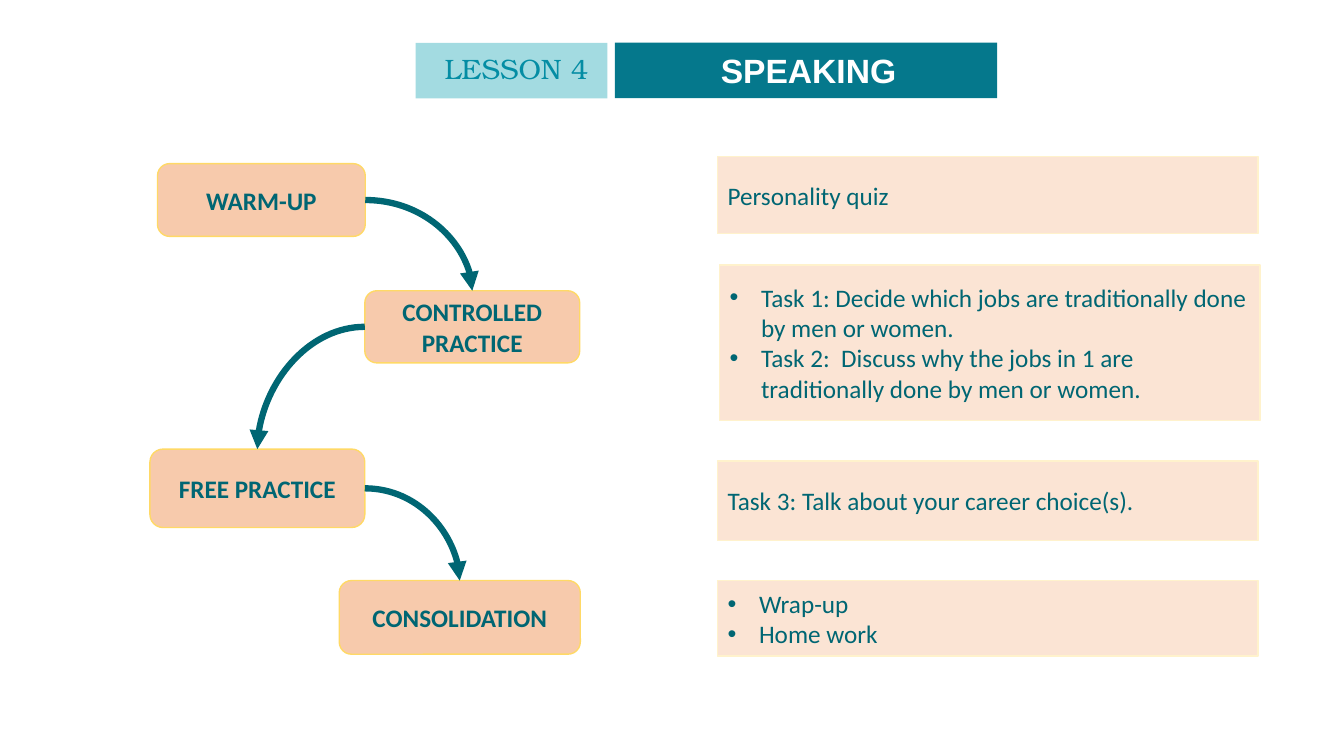
from lxml.etree import SubElement
from pptx import Presentation
from pptx.dml.color import RGBColor
from pptx.enum.shapes import MSO_CONNECTOR as Connector, MSO_SHAPE as Shape
from pptx.enum.text import MSO_ANCHOR as Anchor, MSO_AUTO_SIZE as AutoSize, PP_ALIGN as Align
from pptx.oxml.ns import qn
from pptx.util import Pt

INK = "006673"
BULLET_INDENT = Pt(22.5)
RIGHT, LEFT, TOP = 3, 1, 0

STEPS = [
    ("WARM-UP", (112.5, 116.9, 148.4, 52)),
    ("CONTROLLED PRACTICE", (260.6, 207.7, 153.5, 51.5)),
    ("FREE PRACTICE", (107.1, 320.8, 153.5, 56)),
    ("CONSOLIDATION", (242.3, 414.7, 172.2, 52.6)),
]
ACTIVITIES = [
    (["Personality quiz"], (512.6, 112, 386, 55)),
    (["Task 1: Decide which jobs are traditionally done by men or women.",
      "Task 2:  Discuss why the jobs in 1 are traditionally done by men or women."],
     (514, 189.2, 386, 111)),
    (["Task 3: Talk about your career choice(s)."], (512.6, 329.2, 386, 57)),
    (["Wrap-up", "Home work"], (512.6, 414.7, 386, 54)),
]


def color(hex_value):
    return RGBColor.from_string(hex_value)


def place(shape, box):
    shape.left, shape.top, shape.width, shape.height = map(Pt, box)


def style(paragraph, font_name, size, hex_value, bold=False, align=Align.LEFT):
    paragraph.alignment = align
    font = paragraph.font
    font.name, font.size, font.bold = font_name, Pt(size), bold
    font.color.rgb = color(hex_value)


def add_bullet(paragraph):
    properties = paragraph._p.get_or_add_pPr()
    properties.set("marL", str(BULLET_INDENT))
    properties.set("indent", str(-BULLET_INDENT))
    bullet_color = SubElement(properties, qn("a:buClr"))
    SubElement(bullet_color, qn("a:srgbClr"), val=INK)
    SubElement(properties, qn("a:buFont"), typeface="Arial")
    SubElement(properties, qn("a:buChar"), char="•")


def add_block(slide, kind, box, fill, line=None):
    """Add a filled shape, outlined only when a line colour is given."""
    shape = slide.shapes.add_shape(kind, *map(Pt, box))
    shape.shadow.inherit = False
    shape.fill.solid()
    shape.fill.fore_color.rgb = color(fill)
    if line:
        shape.line.color.rgb = color(line)
        shape.line.width = Pt(1)
    else:
        shape.line.fill.background()
    return shape


def add_step(slide, label, box):
    step = add_block(slide, Shape.ROUNDED_RECTANGLE, box, "F7CAAC", "FFD966")
    step.text_frame.text = label
    style(step.text_frame.paragraphs[0], "Calibri", 18, INK, True, Align.CENTER)
    return step


def add_activity(slide, lines, box):
    """Add a description box; several lines become a bulleted list."""
    frame = add_block(slide, Shape.RECTANGLE, box, "FBE4D4", "FFF2CC").text_frame
    frame.text = "\n".join(lines)
    for paragraph in frame.paragraphs:
        if len(lines) > 1:
            add_bullet(paragraph)
        style(paragraph, "Calibri", 18, INK)


def add_arrow(slide, start, side, end):
    """Curve from a side of one step to the top of the next."""
    arrow = slide.shapes.add_connector(Connector.CURVE, 0, 0, 0, 0)
    arrow.begin_connect(start, side)
    arrow.end_connect(end, TOP)
    arrow.line.color.rgb = color(INK)
    arrow.line.width = Pt(4.5)
    SubElement(arrow.line._get_or_add_ln(), qn("a:tailEnd"), type="triangle")
    properties = arrow._element.spPr
    properties.find(qn("a:prstGeom")).set("prst", "curvedConnector2")
    SubElement(properties, qn("a:effectLst"))


def add_header(slide):
    add_block(slide, Shape.RECTANGLE, (296.9, 30.7, 137, 39.6), "A3DBE1")
    lesson = slide.shapes.add_textbox(*map(Pt, (242.5, 33, 252.7, 31.5)))
    lesson.text_frame.word_wrap = True
    lesson.text_frame.text = "LESSON 4"
    style(lesson.text_frame.paragraphs[0], "TeX Gyre Bonum", 20, "048DA4", align=Align.CENTER)

    add_block(slide, Shape.RECTANGLE, (439.2, 30.5, 273, 39.6), "05788C")
    title = slide.shapes.title
    place(title, (507, 32, 141, 36))
    frame = title.text_frame
    frame.text = "SPEAKING"
    frame.word_wrap = False
    frame.auto_size = AutoSize.NONE
    frame.vertical_anchor = Anchor.TOP
    style(frame.paragraphs[0], "Arial", 24, "FFFFFF", True, Align.CENTER)
    slide.shapes._spTree.append(title._element)  # bring in front of its band


def main():
    presentation = Presentation()
    presentation.slide_width, presentation.slide_height = Pt(960), Pt(540)
    slide = presentation.slides.add_slide(presentation.slide_layouts.get_by_name("Title Only"))
    add_header(slide)
    steps = [add_step(slide, label, box) for label, box in STEPS]
    for start, side, end in zip(steps, (RIGHT, LEFT, RIGHT), steps[1:]):
        add_arrow(slide, start, side, end)
    for lines, box in ACTIVITIES:
        add_activity(slide, lines, box)
    presentation.save("out.pptx")


if __name__ == "__main__":
    main()
